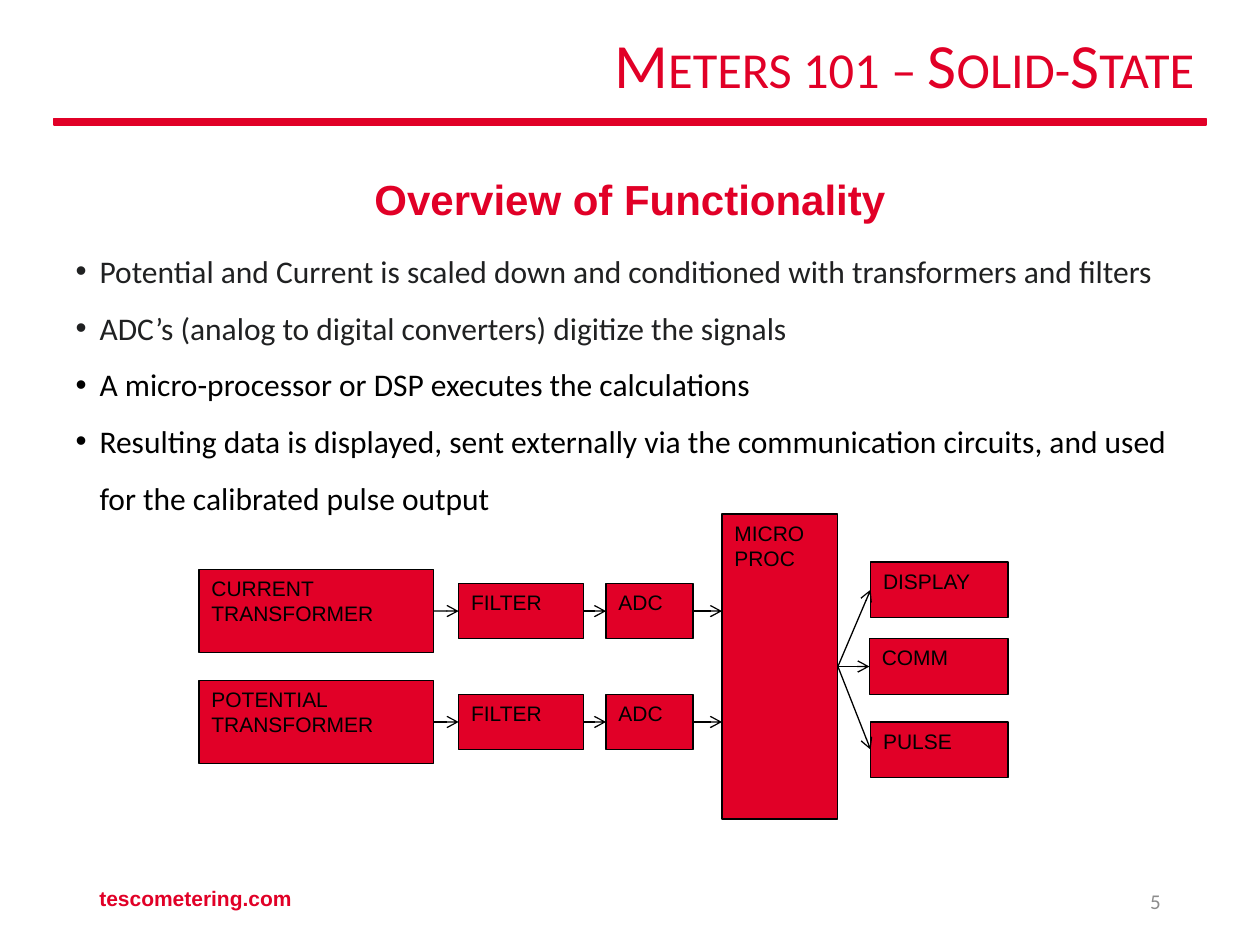
from lxml import etree
from pptx import Presentation
from pptx.dml.color import RGBColor
from pptx.enum import shapes, text
from pptx.oxml.ns import qn
from pptx.util import Inches, Pt

COLORS = {"red": "E10027", "black": "000000", "ink": "202122", "gray": "8C8C8C"}

# Diagram grid: column -> (left, width); rows are centre lines
COLUMNS = {"source": (1.58, 1.86), "filter": (3.64, 0.99), "adc": (4.81, 0.69),
           "processor": (5.73, 0.92), "output": (6.91, 1.09), "comm": (6.9, 1.1)}
INPUT_ROWS = {"CURRENT TRANSFORMER": 4.85, "POTENTIAL TRANSFORMER": 5.73}
OUTPUTS = [("DISPLAY", "output", 4.68), ("COMM", "comm", 5.29), ("PULSE", "output", 5.95)]
PROCESSOR_ROW = 5.29
TALL, MEDIUM, LOW = 2.42, 0.66, 0.44
TOP, LEFT, RIGHT = 0, 1, 3


def color(name):
    return RGBColor.from_string(COLORS[name])


def place(item, left, top, width, height):
    item.left, item.top = Inches(left), Inches(top)
    item.width, item.height = Inches(width), Inches(height)


def add_span(para, words, size, font, tint, bold=False):
    span = para.add_run()
    span.text = words
    span.font.size, span.font.name, span.font.bold = Pt(size), font, bold
    span.font.color.rgb = color(tint)
    return span


def add_label(page, words, area, size, font, tint, align, bold=False,
              anchor=text.MSO_ANCHOR.MIDDLE):
    box = page.shapes.add_textbox(*map(Inches, area))
    box.text_frame.word_wrap = True
    box.text_frame.vertical_anchor = anchor
    para = box.text_frame.paragraphs[0]
    para.alignment = align
    add_span(para, words, size, font, tint, bold)


def add_rectangle(page, area, line_color, line_width):
    box = page.shapes.add_shape(shapes.MSO_SHAPE.RECTANGLE, *map(Inches, area))
    box.shadow.inherit = False
    box.fill.solid()
    box.fill.fore_color.rgb = color("red")
    box.line.color.rgb = color(line_color)
    box.line.width = Pt(line_width)
    return box


def add_block(page, lines, column, center, height):
    left, width = COLUMNS[column]
    box = add_rectangle(page, (left, center - height / 2, width, height), "black", 0.75)
    frame = box.text_frame
    frame.word_wrap = True
    frame.vertical_anchor = text.MSO_ANCHOR.TOP
    for number, words in enumerate(lines):
        para = frame.add_paragraph() if number else frame.paragraphs[0]
        para.alignment = text.PP_ALIGN.LEFT
        add_span(para, words, 12, "Arial", "black")
    return box


def add_arrow(page, start, target, end_y=None):
    """Join two blocks; end_y gives a free end on the target's left side."""
    y = start.top + start.height // 2
    arrow = page.shapes.add_connector(
        shapes.MSO_CONNECTOR.STRAIGHT, start.left + start.width, y,
        target.left, y if end_y is None else Inches(end_y))
    arrow.begin_connect(start, RIGHT)
    if end_y is None:
        arrow.end_connect(target, LEFT)
    arrow.line.color.rgb = color("black")
    arrow.line.width = Pt(0.75)
    properties = arrow._element.spPr
    etree.SubElement(properties.find(qn("a:ln")), qn("a:tailEnd"), type="arrow")
    etree.SubElement(properties, qn("a:effectLst"))


def fill_title(page):
    title = page.shapes.title
    place(title, 1.7, 0.17, 7.88, 0.74)
    frame = title.text_frame
    frame.auto_size = text.MSO_AUTO_SIZE.NONE
    frame.vertical_anchor = text.MSO_ANCHOR.MIDDLE
    para = frame.paragraphs[0]
    para.alignment = text.PP_ALIGN.RIGHT
    para.line_spacing = 0.9
    span = add_span(para, "Meters 101 – Solid-State", 36, "Calibri", "red")
    span._r.get_or_add_rPr().set("cap", "small")


def fill_list(page):
    body = page.placeholders[1]
    place(body, 0.5, 1.8, 9, 2.56)
    frame = body.text_frame
    frame.auto_size = text.MSO_AUTO_SIZE.NONE
    frame.vertical_anchor = text.MSO_ANCHOR.TOP
    items = [
        ("Potential and Current is scaled down and conditioned with transformers and filters", "ink"),
        ("ADC’s (analog to digital converters) digitize the signals", "ink"),
        ("A micro-processor or DSP executes the calculations", "black"),
        ("Resulting data is displayed, sent externally via the communication circuits, "
         "and used for the calibrated pulse output", "black"),
    ]
    for number, (words, tint) in enumerate(items):
        para = frame.add_paragraph() if number else frame.paragraphs[0]
        properties = para._p.get_or_add_pPr()
        properties.set("marL", str(Inches(0.19)))
        properties.set("indent", str(-Inches(0.19)))
        etree.SubElement(properties, qn("a:buFont"), typeface="Arial")
        etree.SubElement(properties, qn("a:buChar"), char="•")
        para.line_spacing = 1.5
        para.space_before = Pt(0)
        add_span(para, words, 18, "Calibri", tint)


def draw_diagram(page):
    processor = add_block(page, ["MICRO", "PROC"], "processor", PROCESSOR_ROW, TALL)
    # Input chains
    for name, row in INPUT_ROWS.items():
        source = add_block(page, [name], "source", row, MEDIUM)
        signal_filter = add_block(page, ["FILTER"], "filter", row, LOW)
        converter = add_block(page, ["ADC"], "adc", row, LOW)
        add_arrow(page, source, signal_filter)
        add_arrow(page, signal_filter, converter)
        add_arrow(page, converter, processor, end_y=row)
    # Outputs
    for name, column, row in OUTPUTS:
        add_arrow(page, processor, add_block(page, [name], column, row, LOW))


def main():
    deck = Presentation()
    deck.slide_width, deck.slide_height = Inches(10), Inches(7.5)
    page = deck.slides.add_slide(deck.slide_layouts[1])

    # Header
    add_rectangle(page, (0.43, 0.94, 9.14, 0.05), "red", 1)
    fill_title(page)

    # Content
    add_label(page, "Overview of Functionality", (2.46, 1.33, 5.08, 0.51), 24, "Arial",
              "red", text.PP_ALIGN.CENTER, bold=True, anchor=text.MSO_ANCHOR.TOP)
    fill_list(page)
    draw_diagram(page)

    # Footer
    add_label(page, "tescometering.com", (0.69, 6.93, 3.38, 0.4), 12, "Arial", "red",
              text.PP_ALIGN.LEFT, bold=True)
    add_label(page, "5", (7.06, 6.95, 2.25, 0.4), 12, "Calibri", "gray", text.PP_ALIGN.RIGHT)

    deck.save("out.pptx")


if __name__ == "__main__":
    main()
